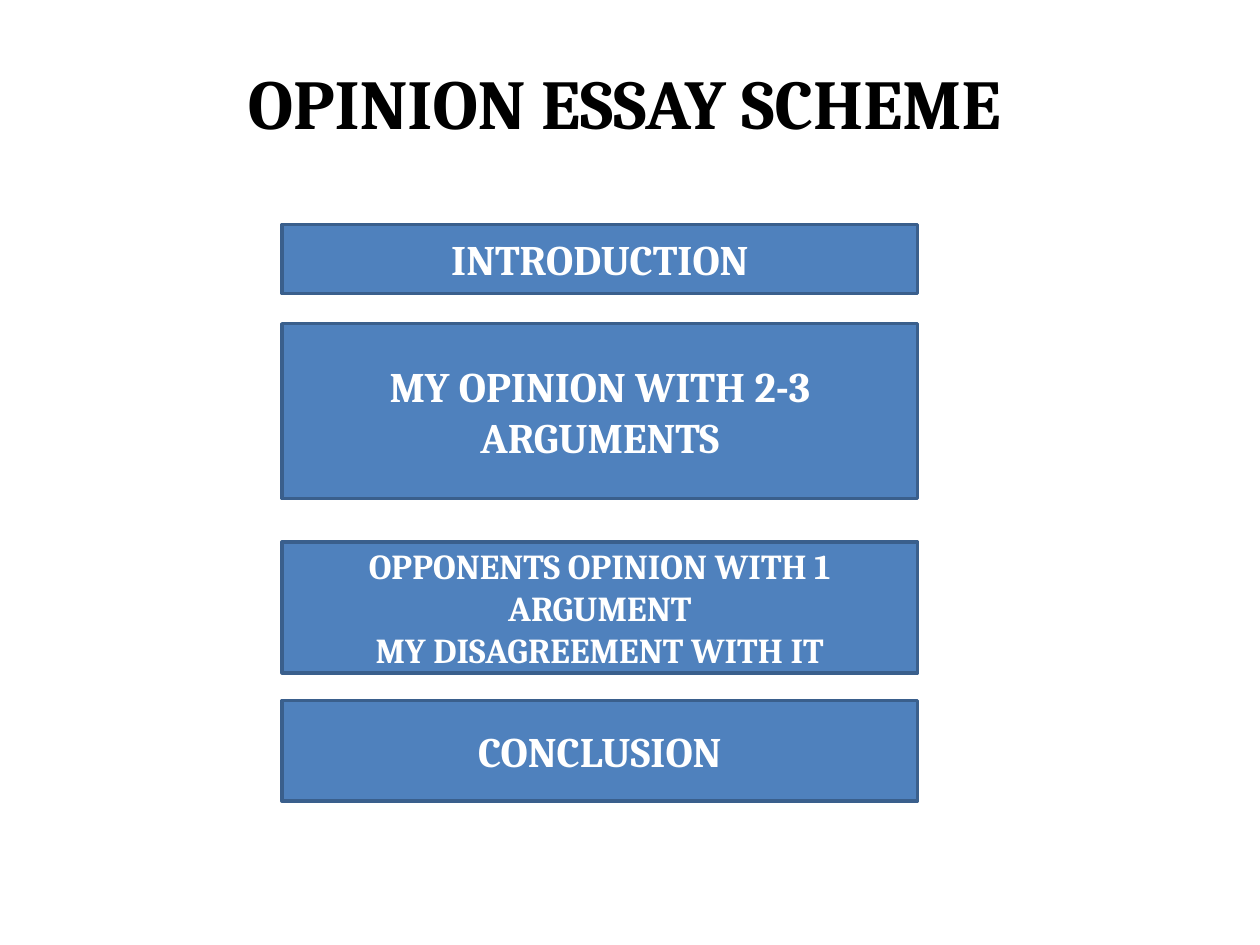
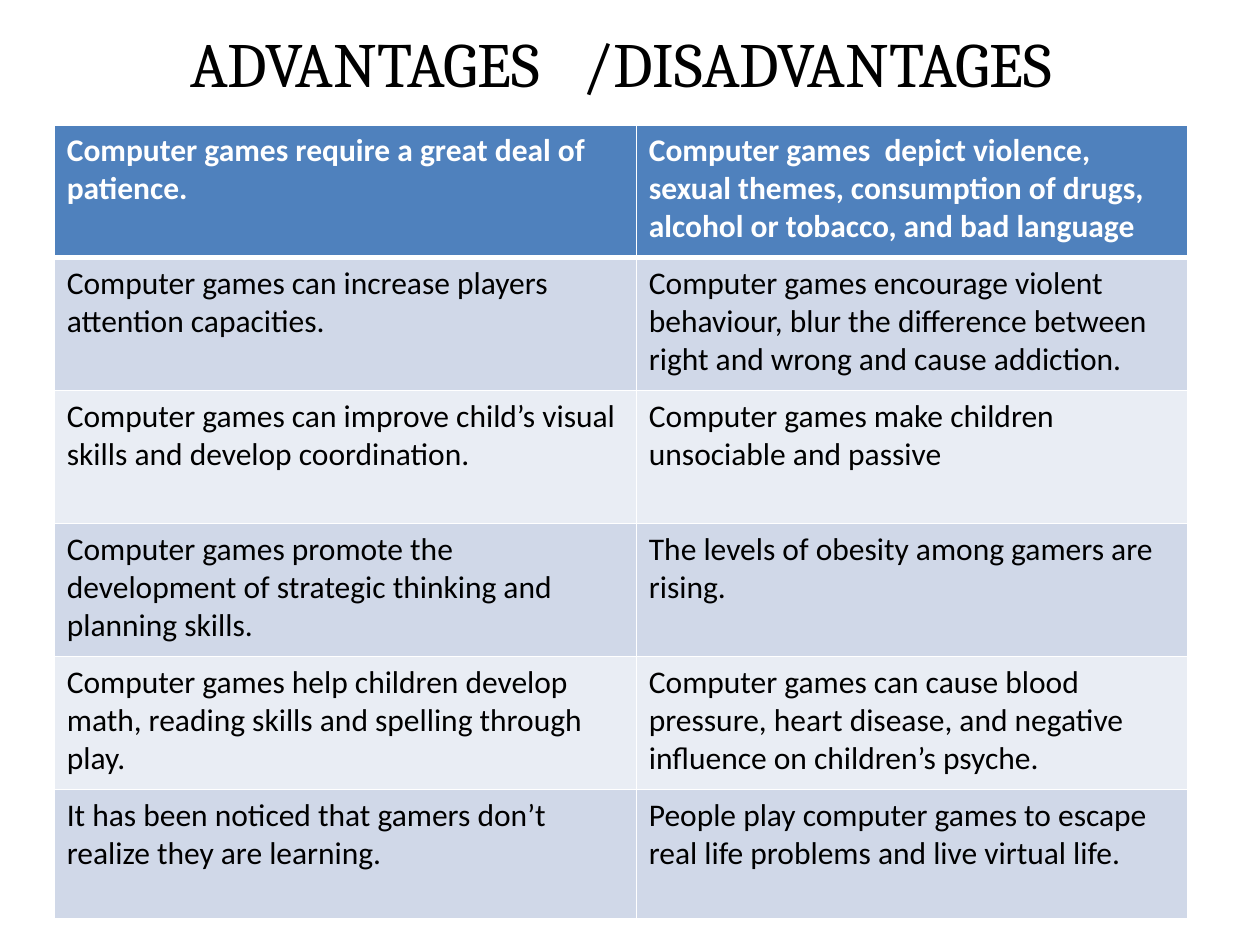
from lxml import etree
from pptx import Presentation
from pptx import util as u
from pptx.dml.color import RGBColor
from pptx.enum import shapes, text
from pptx.oxml.ns import qn

Pt = u.Pt

# Shared look
HUES = {"blue": "4F81BD", "edge": "3A5F8C", "white": "FFFFFF",
        "black": "000000", "dark": "D0D8E8", "pale": "E9EDF4"}
SERIF, SANS = "Cambria", "Calibri"

# Essay scheme: top, height, text size, lines
PARTS = [
    (128.2, 39.6, 24, ["INTRODUCTION"]),
    (185, 100, 24, ["MY OPINION WITH 2-3 ARGUMENTS"]),
    (309.6, 75, 20, ["OPPONENTS OPINION WITH 1 ARGUMENT",
                     "MY DISAGREEMENT WITH IT"]),
    (400.3, 57.6, 24, ["CONCLUSION"]),
]
PART_X, PART_W = 161.3, 363

# Pros and cons, the first pair is the header row
PAIRS = [
    ("Computer games require a great deal of patience.",
     "Computer games  depict violence, sexual themes, consumption of drugs, "
     "alcohol or tobacco, and bad language"),
    ("Computer games can increase players attention capacities.",
     "Computer games encourage violent behaviour, blur the difference between "
     "right and wrong and cause addiction."),
    ("Computer games can improve child’s visual skills and develop coordination.",
     "Computer games make children unsociable and passive"),
    ("Computer games promote the development of strategic thinking and "
     "planning skills.",
     "The levels of obesity among gamers are rising."),
    ("Computer games help children develop math, reading skills and spelling "
     "through play.",
     "Computer games can cause blood pressure, heart disease, and negative "
     "influence on children’s psyche."),
    ("It has been noticed that gamers don’t realize they are learning.",
     "People play computer games to escape real life problems and live "
     "virtual life."),
]
GRID_X, GRID_Y = 31, 71.3
COLS = [332.6, 315.4]
ROWS = [76] * 5 + [73.5]


def hue(name):
    return RGBColor.from_string(HUES[name])


def write(frame, lines, size=18, font=SANS, color="black", bold=False,
          align=text.PP_ALIGN.LEFT):
    """Fill a text frame; each line is a list of runs or one string."""
    frame.word_wrap = True
    for i, line in enumerate(lines):
        para = frame.paragraphs[0] if i == 0 else frame.add_paragraph()
        para.alignment = align
        for part in [line] if isinstance(line, str) else line:
            run = para.add_run()
            run.text = part
            face = run.font
            face.size, face.name, face.bold = Pt(size), font, bold
            face.color.rgb = hue(color)


def start(deck, line, box, **form):
    """Add a slide with its title."""
    page = deck.slides.add_slide(deck.slide_layouts[5])
    head = page.shapes.title
    head.left, head.top, head.width, head.height = map(Pt, box)
    head.text_frame.vertical_anchor = text.MSO_ANCHOR.MIDDLE
    write(head.text_frame, [line], font=SERIF,
          align=text.PP_ALIGN.CENTER, **form)
    return page


def edge(cell, top, low):
    """Draw white borders, which come before the fill in the cell."""
    props = cell._tc.get_or_add_tcPr()
    sides = {"a:lnL": 1, "a:lnR": 1, "a:lnT": top, "a:lnB": low}
    for i, (side, wide) in enumerate(sides.items()):
        line = etree.Element(qn(side), w=str(Pt(wide)))
        fill = etree.SubElement(line, qn("a:solidFill"))
        etree.SubElement(fill, qn("a:srgbClr"), val=HUES["white"])
        props.insert(i, line)


def scheme(deck):
    page = start(deck, "OPINION ESSAY SCHEME", (36, 21.6, 641.5, 72.7),
                 size=40, bold=True)
    for top, high, size, lines in PARTS:
        box = page.shapes.add_shape(
            shapes.MSO_SHAPE.RECTANGLE, Pt(PART_X), Pt(top), Pt(PART_W), Pt(high))
        box.shadow.inherit = False
        box.fill.solid()
        box.fill.fore_color.rgb = hue("blue")
        box.line.color.rgb = hue("edge")
        box.line.width = Pt(2)
        box.text_frame.vertical_anchor = text.MSO_ANCHOR.MIDDLE
        write(box.text_frame, lines, size=size, font=SERIF, color="white",
              bold=True, align=text.PP_ALIGN.CENTER)


def compare(deck):
    page = start(deck, ["ADVANTAGES", " ", "/DISADVANTAGES"],
                 (GRID_X, 0, sum(COLS), GRID_Y), size=36)
    # Widen the one space before the slash
    gap = page.shapes.title.text_frame.paragraphs[0].runs[1]
    gap.font._element.set("spc", "1600")

    grid = page.shapes.add_table(
        len(ROWS), len(COLS), Pt(GRID_X), Pt(GRID_Y),
        Pt(sum(COLS)), Pt(sum(ROWS))).table
    for col, wide in zip(grid.columns, COLS):
        col.width = Pt(wide)
    for r, (pair, high) in enumerate(zip(PAIRS, ROWS)):
        grid.rows[r].height = Pt(high)
        first = r == 0
        back = "blue" if first else ("dark" if r % 2 else "pale")
        for c, words in enumerate(pair):
            cell = grid.cell(r, c)
            cell.fill.solid()
            cell.fill.fore_color.rgb = hue(back)
            edge(cell, top=3 if r == 1 else 1, low=3 if first else 1)
            write(cell.text_frame, [words], bold=first,
                  color="white" if first else "black")


def main():
    deck = Presentation()
    deck.slide_width, deck.slide_height = Pt(720), Pt(540)
    scheme(deck)
    compare(deck)
    deck.save("out.pptx")


if __name__ == "__main__":
    main()
